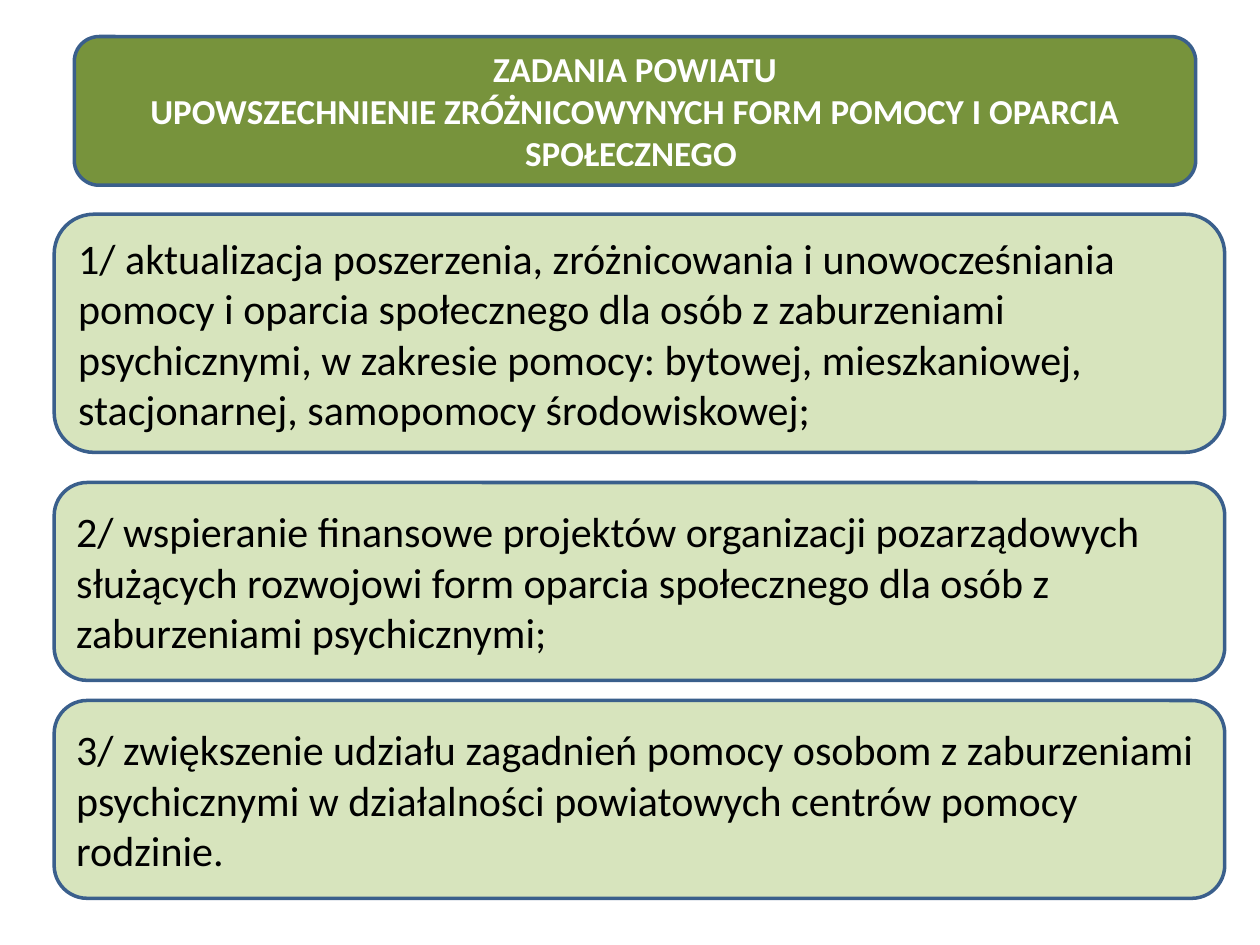
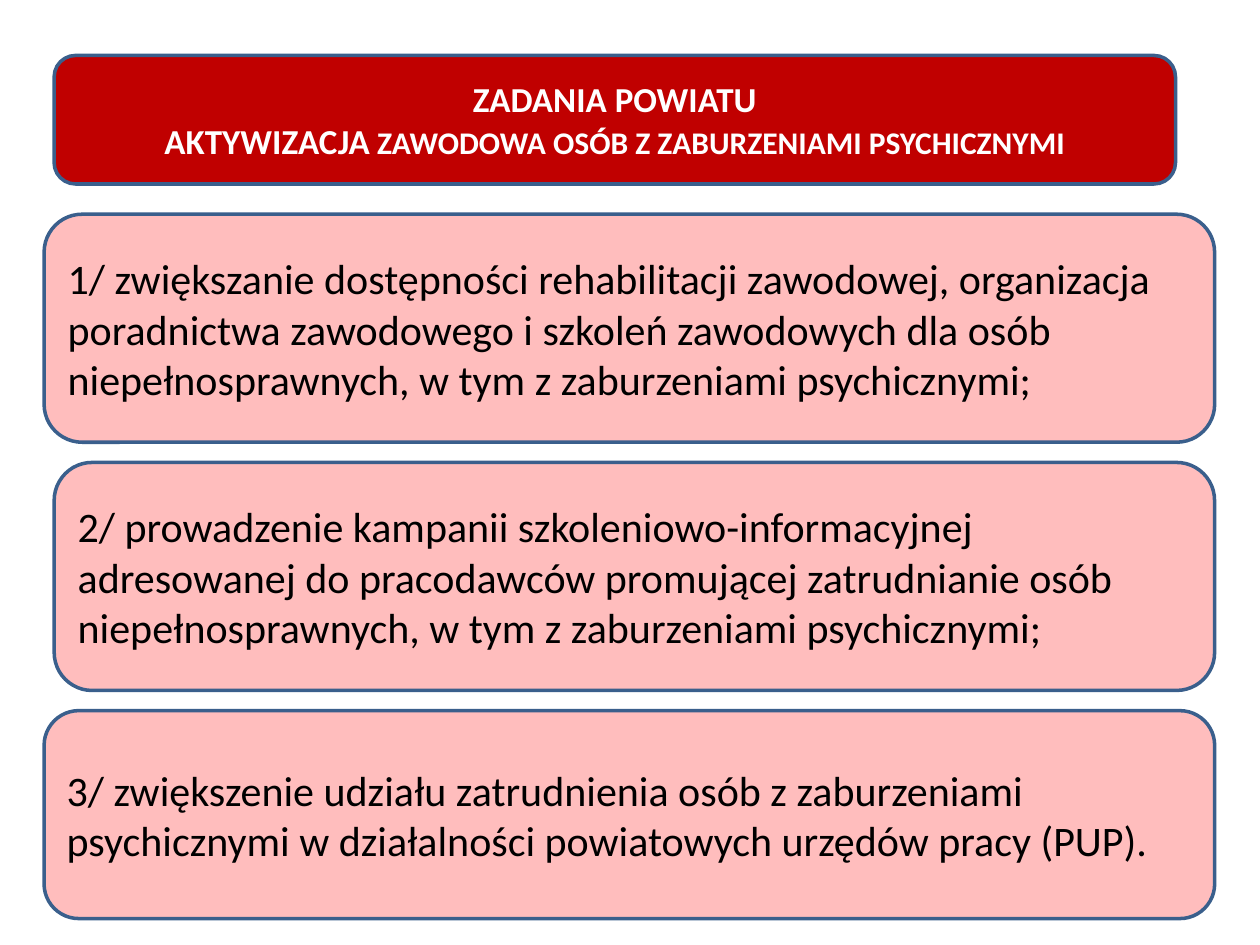
from dataclasses import dataclass

from pptx import Presentation
from pptx.dml.color import RGBColor
from pptx.enum import shapes, text
from pptx.util import Inches, Pt


@dataclass(frozen=True)
class Theme:
    font: str = "Calibri"
    outline: str = "3A5F8C"
    outline_width: float = 2
    title_color: str = "FFFFFF"
    body_color: str = "000000"
    title_size: int = 20
    small_title_size: int = 18
    body_size: int = 24


theme = Theme()

# Each title line is a list of (words, size); each task is (left, top, width, height, words)
pages = [
    {
        "band": (0.59, 0.29, 8.9, 1.18), "band_fill": "77933C", "task_fill": "D7E4BD",
        "title": [
            [("ZADANIA POWIATU", theme.title_size)],
            [("UPOWSZECHNIENIE ZRÓŻNICOWYNYCH FORM POMOCY I OPARCIA SPOŁECZNEGO ", theme.title_size)],
        ],
        "tasks": [
            (0.43, 1.7, 9.29, 1.89,
             "1/ aktualizacja poszerzenia, zróżnicowania i unowocześniania pomocy i oparcia "
             "społecznego dla osób z zaburzeniami psychicznymi, w zakresie pomocy: bytowej, "
             "mieszkaniowej, stacjonarnej, samopomocy środowiskowej;"),
            (0.43, 3.83, 9.29, 1.57,
             "2/ wspieranie finansowe projektów organizacji pozarządowych służących rozwojowi "
             "form oparcia społecznego dla osób z zaburzeniami psychicznymi;"),
            (0.43, 5.56, 9.29, 1.57,
             "3/ zwiększenie udziału zagadnień pomocy osobom z zaburzeniami psychicznymi "
             "w działalności powiatowych centrów pomocy rodzinie."),
        ],
    },
    {
        "band": (0.43, 0.44, 8.9, 1.02), "band_fill": "C00000", "task_fill": "FFBDBD",
        "title": [
            [("ZADANIA POWIATU", theme.title_size)],
            [("AKTYWIZACJA", theme.title_size),
             (" ZAWODOWA OSÓB Z ZABURZENIAMI PSYCHICZNYMI", theme.small_title_size)],
        ],
        "tasks": [
            (0.35, 1.7, 9.29, 1.81,
             "1/ zwiększanie dostępności rehabilitacji zawodowej, organizacja poradnictwa "
             "zawodowego i szkoleń zawodowych dla osób niepełnosprawnych, w tym "
             "z zaburzeniami psychicznymi;"),
            (0.43, 3.67, 9.21, 1.81,
             "2/ prowadzenie kampanii szkoleniowo-informacyjnej adresowanej do pracodawców "
             "promującej zatrudnianie osób niepełnosprawnych, w tym z zaburzeniami psychicznymi;"),
            (0.35, 5.64, 9.29, 1.65,
             "3/ zwiększenie udziału zatrudnienia osób z zaburzeniami psychicznymi "
             "w działalności powiatowych urzędów pracy (PUP)."),
        ],
    },
]


def add_panel(page, place, fill):
    """Add a rounded, outlined panel."""
    panel = page.shapes.add_shape(shapes.MSO_SHAPE.ROUNDED_RECTANGLE, *map(Inches, place))
    panel.shadow.inherit = False
    panel.fill.solid()
    panel.fill.fore_color.rgb = RGBColor.from_string(fill)
    panel.line.color.rgb = RGBColor.from_string(theme.outline)
    panel.line.width = Pt(theme.outline_width)
    return panel


def format_span(span, size, color, bold=False):
    span.font.name = theme.font
    span.font.size = Pt(size)
    span.font.bold = bold
    span.font.color.rgb = RGBColor.from_string(color)


deck = Presentation()
deck.slide_width, deck.slide_height = Inches(10), Inches(7.5)
title_only = deck.slide_layouts[5]

for content in pages:
    page = deck.slides.add_slide(title_only)

    # Title band, with the title placeholder brought in front of it
    band = add_panel(page, content["band"], content["band_fill"])
    title = page.shapes.title
    band._element.addnext(title._element)
    title.left, title.top, title.width, title.height = map(Inches, content["band"])
    frame = title.text_frame
    frame.auto_size = text.MSO_AUTO_SIZE.NONE
    frame.word_wrap = True
    frame.vertical_anchor = text.MSO_ANCHOR.MIDDLE
    frame.text = "\n".join("" for line in content["title"])
    for para, line in zip(frame.paragraphs, content["title"]):
        para.alignment = text.PP_ALIGN.CENTER
        for words, size in line:
            span = para.add_run()
            span.text = words
            format_span(span, size, theme.title_color, bold=True)

    # Task panels
    for *place, words in content["tasks"]:
        box = add_panel(page, place, content["task_fill"])
        frame = box.text_frame
        frame.word_wrap = True
        frame.vertical_anchor = text.MSO_ANCHOR.MIDDLE
        frame.text = words
        para = frame.paragraphs[0]
        para.alignment = text.PP_ALIGN.LEFT
        format_span(para.runs[0], theme.body_size, theme.body_color)

deck.save("out.pptx")
